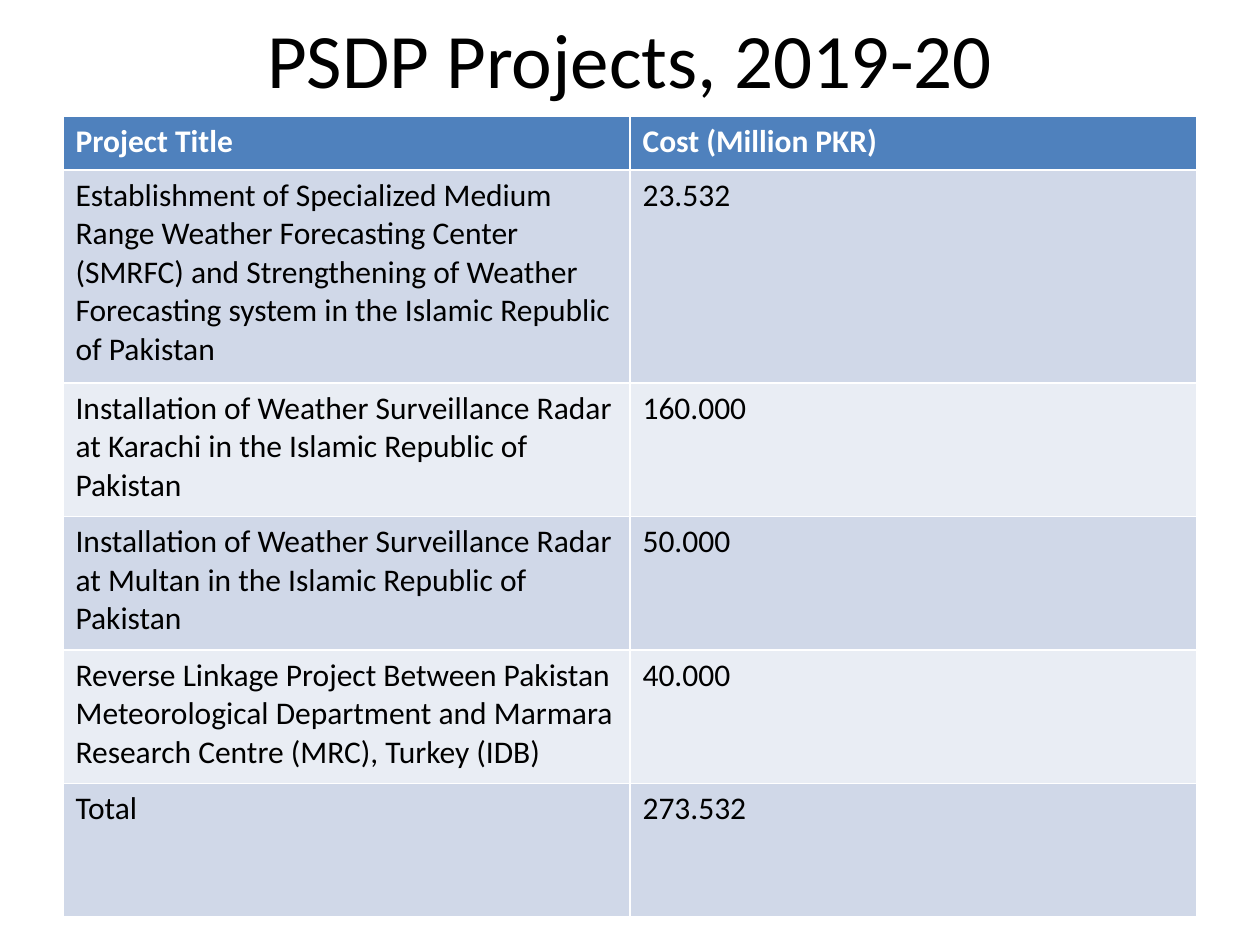
from pptx import Presentation
from pptx.dml.color import RGBColor
from pptx.enum.text import MSO_ANCHOR, PP_ALIGN
from pptx.util import Inches, Pt

CENTER = PP_ALIGN.CENTER
MIDDLE = MSO_ANCHOR.MIDDLE

BLACK = RGBColor(0x00, 0x00, 0x00)
WHITE = RGBColor(0xFF, 0xFF, 0xFF)
HEADER_BLUE = RGBColor(0x4F, 0x81, 0xBD)
BAND_DARK = RGBColor(0xD0, 0xD8, 0xE8)
BAND_LIGHT = RGBColor(0xE9, 0xED, 0xF4)

TITLE_ONLY = 5
LEFT, WIDTH = 0.5, 9
TITLE_HEIGHT = 0.92
ROW_HEIGHTS = [0.43, 1.69] + [1.06] * 4

PROJECTS = [
    ("Project Title", "Cost (Million PKR)"),
    ("Establishment of Specialized Medium Range Weather Forecasting Center "
     "(SMRFC) and Strengthening of Weather Forecasting system in the Islamic "
     "Republic of Pakistan", "23.532"),
    ("Installation of Weather Surveillance Radar at Karachi in the Islamic "
     "Republic of Pakistan", "160.000"),
    ("Installation of Weather Surveillance Radar at Multan in the Islamic "
     "Republic of Pakistan", "50.000"),
    ("Reverse Linkage Project Between Pakistan Meteorological Department and "
     "Marmara Research Centre (MRC), Turkey (IDB)", "40.000"),
    ("Total", "273.532"),
]


class SlideBuilder:
    font_name = "Calibri"

    def __init__(self, prs):
        self.s = prs.slides.add_slide(prs.slide_layouts[TITLE_ONLY])

    def add_text(self, tf, text, size, color, bold=False):
        p = tf.paragraphs[0]
        r = p.add_run()
        r.text = text
        r.font.color.rgb = color
        font_format = {"name": self.font_name, "size": Pt(size), "bold": bold}
        for name, value in font_format.items():
            setattr(r.font, name, value)
        return p

    def title(self, text, left, top, width, height):
        sp = self.s.shapes.title
        box = {"left": left, "top": top, "width": width, "height": height}
        for name, value in box.items():
            setattr(sp, name, Inches(value))
        sp.text_frame.vertical_anchor = MIDDLE
        self.add_text(sp.text_frame, text, 44, BLACK).alignment = CENTER

    def table(self, rows, left, top, width, row_heights):
        columns = len(rows[0])
        frame = self.s.shapes.add_table(
            len(rows), columns, Inches(left), Inches(top),
            Inches(width), Inches(sum(row_heights)))
        table = frame.table
        for column in table.columns:
            column.width = Inches(width / columns)
        for i, (values, height) in enumerate(zip(rows, row_heights)):
            table.rows[i].height = Inches(height)
            header = i == 0
            band = BAND_DARK if i % 2 else BAND_LIGHT
            for cell, text in zip(table.rows[i].cells, values):
                cell.fill.solid()
                cell.fill.fore_color.rgb = HEADER_BLUE if header else band
                self.add_text(cell.text_frame, text, 18,
                              WHITE if header else BLACK, header)


def main():
    prs = Presentation()
    prs.slide_width, prs.slide_height = Inches(10), Inches(7.5)
    slide = SlideBuilder(prs)
    slide.title("PSDP Projects, 2019-20", LEFT, 0, WIDTH, TITLE_HEIGHT)
    slide.table(PROJECTS, LEFT, TITLE_HEIGHT, WIDTH, ROW_HEIGHTS)
    prs.save("out.pptx")


if __name__ == "__main__":
    main()
